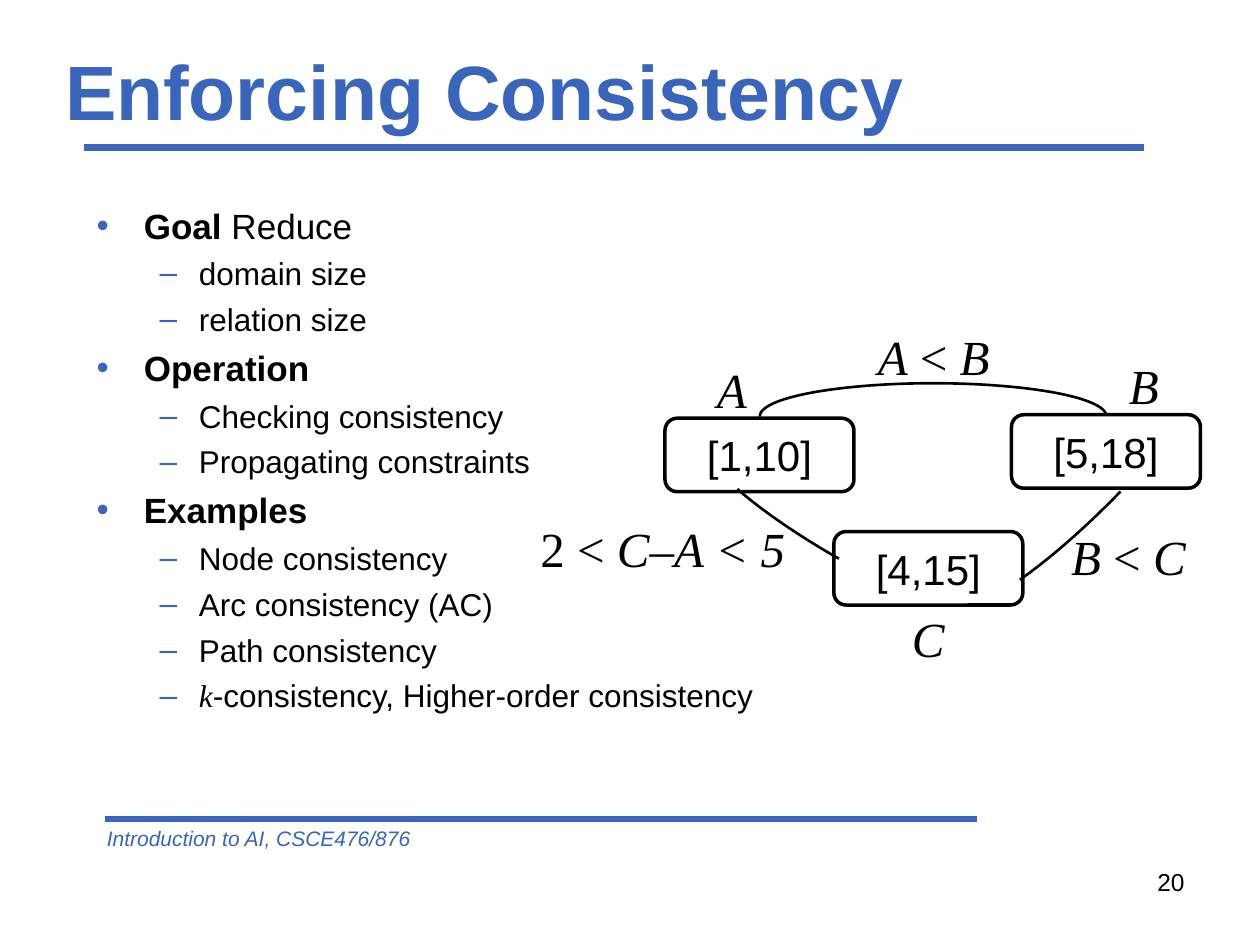
from lxml.etree import SubElement
from pptx import Presentation
from pptx.dml.color import RGBColor
from pptx.enum.shapes import MSO_CONNECTOR, MSO_SHAPE
from pptx.enum.text import MSO_ANCHOR, MSO_AUTO_SIZE, PP_ALIGN
from pptx.oxml.ns import qn
from pptx.util import Pt

BLUE, BLACK = "3A65BC", "000000"
SANS, SERIF = "Arial", "Times New Roman"

# Content: the outline, with one list of subpoints per heading
TITLE = "Enforcing Consistency"
FOOTER = "Introduction to AI, CSCE476/876"
PAGE_NUMBER = "20"
OUTLINE = [
    ("Goal", " Reduce", ["domain size", "relation size"]),
    ("Operation", "", ["Checking consistency", "Propagating constraints"]),
    ("Examples", "", ["Node consistency", "Arc consistency (AC)", "Path consistency",
                      ("k", "-consistency, Higher-order consistency")]),
]
# Size, left margin, hanging indent, space before, bullet for each level
LEVELS = [(20, 27, 27, 5, "•"), (18, 58.5, 22.5, 4.6, "–")]

# Constraint graph: left, top (and width, rotation, start and end angle)
NODE_SIZE, ARC_SIZE, LABEL_HEIGHT = (108, 42), (198, 37.5), 41
NODES = [("[1,10]", 380, 239), ("[5,18]", 578, 237), ("[4,15]", 476.5, 303.75)]
ARCS = [(434.25, 219, 0, 107.87, 0),
        (393.75, 286.5, 209.2, 170.65, 210.42),
        (522, 255, 135, 147.26, 209.15)]
# Label runs are (text, italic)
LABELS = [
    ([("A", True), (" < ", False), ("B", True)], 494.5, 183, 79),
    ([("B", True), (" < ", False), ("C", True)], 605, 297.5, 80.5),
    ([("2 < ", False), ("C", True), ("–", False), ("A < 5", True)], 301.75, 292.5, 155.5),
    ([("A", True)], 402.5, 201.75, 32),
    ([("B", True)], 638, 199.5, 32),
    ([("C", True)], 514, 344, 32),
]


def color(value):
    return RGBColor.from_string(value)


def style(font, size, name=SANS, fill=BLACK, bold=False, italic=False):
    font.size, font.name = Pt(size), name
    font.bold, font.italic = bold, italic
    font.color.rgb = color(fill)


def place(shape, left, top, width, height):
    shape.left, shape.top = Pt(left), Pt(top)
    shape.width, shape.height = Pt(width), Pt(height)


def add_rule(left, right, y):
    rule = page.shapes.add_connector(MSO_CONNECTOR.STRAIGHT, Pt(left), Pt(y), Pt(right), Pt(y))
    rule.line.color.rgb, rule.line.width = color(BLUE), Pt(4)
    SubElement(rule.element.spPr, qn("a:effectLst"))


def add_text(left, top, width, height, wrap=True):
    box = page.shapes.add_textbox(Pt(left), Pt(top), Pt(width), Pt(height))
    box.text_frame.word_wrap = wrap
    return box.text_frame.paragraphs[0]


def add_outlined(kind, left, top, size, weight):
    shape = page.shapes.add_shape(kind, Pt(left), Pt(top), Pt(size[0]), Pt(size[1]))
    shape.shadow.inherit = False
    shape.fill.background()
    shape.line.color.rgb, shape.line.width = color(BLACK), Pt(weight)
    return shape


def add_item(frame, level):
    first = not frame.text
    para = frame.paragraphs[0] if first else frame.add_paragraph()
    size, margin, hang, gap, mark = LEVELS[level]
    para.level = level
    props = para._p.get_or_add_pPr()
    props.set("marL", str(Pt(margin)))
    props.set("indent", str(-Pt(hang)))
    SubElement(SubElement(props, qn("a:buClr")), qn("a:srgbClr"), val=BLUE)
    SubElement(props, qn("a:buFont"), typeface=SANS)
    SubElement(props, qn("a:buChar"), char=mark)
    para.space_before = Pt(0 if first else gap)
    style(para.font, size, bold=level == 0)
    return para


def add_span(para, text):
    span = para.add_run()
    span.text = text
    return span


deck = Presentation()
deck.slide_width, deck.slide_height = Pt(720), Pt(540)
page = deck.slides.add_slide(deck.slide_layouts[1])

# Rules, footer and page number
add_rule(48, 654, 84.25)
add_rule(60, 558, 468)
footer = add_text(54, 468, 378, 21.6)
footer.text = FOOTER
style(footer.font, 12, fill=BLUE, italic=True)
number = add_text(516, 492, 168, 37.5)
number.text, number.alignment = PAGE_NUMBER, PP_ALIGN.RIGHT
style(number.font, 14)

# Title
title = page.shapes.title
place(title, 30, 24, 648, 54)
title.text_frame.auto_size = MSO_AUTO_SIZE.NONE
title.text_frame.vertical_anchor = MSO_ANCHOR.MIDDLE
heading = title.text_frame.paragraphs[0]
heading.text, heading.alignment = TITLE, PP_ALIGN.LEFT
style(heading.font, 44, fill=BLUE, bold=True)

# Outline
body = page.placeholders[1]
place(body, 48, 113, 405, 312)
body.text_frame.auto_size = MSO_AUTO_SIZE.NONE
for name, rest, points in OUTLINE:
    para = add_item(body.text_frame, 0)
    add_span(para, name)
    if rest:
        add_span(para, rest).font.bold = False
    for point in points:
        para = add_item(body.text_frame, 1)
        if isinstance(point, tuple):
            symbol, point = point
            span = add_span(para, symbol)
            span.font.name, span.font.italic = SERIF, True
        add_span(para, point)

# Constraint graph
for domain, left, top in NODES:
    node = add_outlined(MSO_SHAPE.ROUNDED_RECTANGLE, left, top, NODE_SIZE, 2)
    node.text_frame.vertical_anchor = MSO_ANCHOR.MIDDLE
    para = node.text_frame.paragraphs[0]
    para.text, para.alignment = domain, PP_ALIGN.CENTER
    style(para.font, 24)

for left, top, rotation, start, end in ARCS:
    arc = add_outlined(MSO_SHAPE.ARC, left, top, ARC_SIZE, 1.5)
    arc.rotation = rotation
    arc.adjustments[0], arc.adjustments[1] = start, end

for spans, left, top, width in LABELS:
    para = add_text(left, top, width, LABEL_HEIGHT, wrap=False)
    style(para.font, 28, SERIF)
    for text, italic in spans:
        add_span(para, text).font.italic = italic

deck.save("out.pptx")
